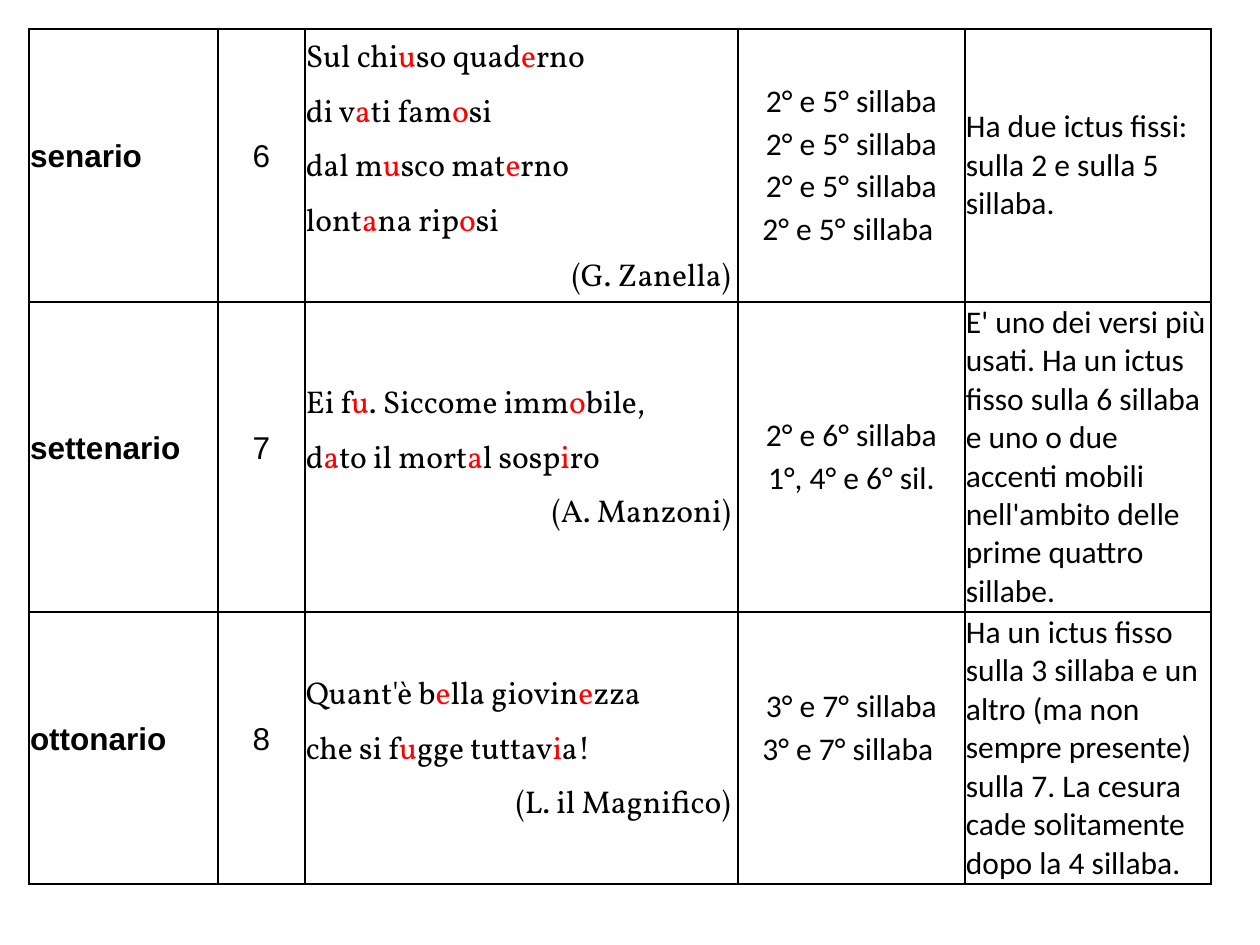
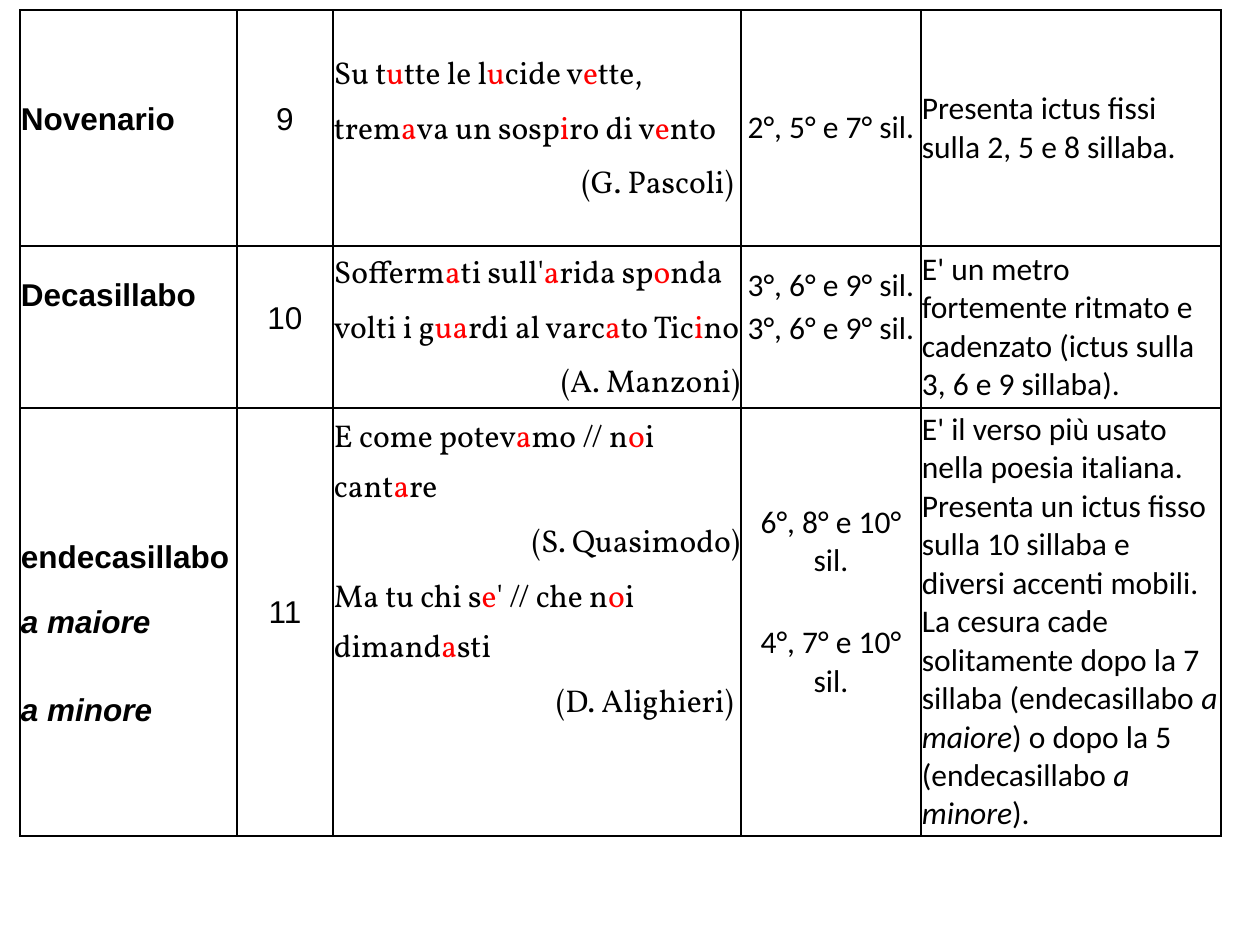
from collections import namedtuple

from lxml.etree import SubElement
from pptx import Presentation
from pptx.dml.color import RGBColor
from pptx.enum.text import MSO_ANCHOR as Anchor, PP_ALIGN as Align
from pptx.oxml.ns import qn
from pptx.util import Emu, Pt

PX = 914400 / 126
COLORS = {"ink": "000000", "accent": "FF0000"}
MARK = "|"  # encloses the stressed vowels of a verse, or italic words
TIE = "~"  # stands for a no-break space

ColumnStyle = namedtuple("ColumnStyle", "font bold align spacing accented")
COLUMN_STYLES = [
    ColumnStyle("Arial", True, Align.LEFT, Pt(10), False),
    ColumnStyle("Arial", False, Align.CENTER, Pt(10), False),
    ColumnStyle("Vollkorn", False, Align.LEFT, 1.15, True),
    ColumnStyle("Calibri", False, Align.CENTER, 1.0, False),
    ColumnStyle("Calibri", False, Align.LEFT, 1.0, False),
]

# Lines of a cell; gaps are extra px before each line, top and bottom extra margins
Content = namedtuple("Content", "lines gaps top bottom", defaults=((), 0, 0))

SHORT_VERSES = [
    [
        Content(["senario"]),
        Content(["6"]),
        Content([
            "Sul chi|u|so quad|e|rno",
            "di v|a|ti fam|o|si",
            "dal m|u|sco mat|e|rno",
            "lont|a|na rip|o|si",
            "(G. Zanella)~",
        ]),
        Content(["2° e 5° sillaba"] * 3 + ["2° e 5° sillaba~"]),
        Content(["Ha due ictus fissi: sulla 2 e sulla 5 sillaba."]),
    ],
    [
        Content(["settenario"]),
        Content(["7"]),
        Content([
            "Ei f|u|. Siccome imm|o|bile,",
            "d|a|to il mort|a|l sosp|i|ro",
            "(A. Manzoni)~",
        ]),
        Content(["2° e 6° sillaba", "1°, 4° e 6° sil."]),
        Content(["E' uno dei versi più usati. Ha un ictus fisso sulla 6 sillaba e uno o due "
                 "accenti mobili nell'ambito delle prime quattro sillabe."]),
    ],
    [
        Content(["ottonario"]),
        Content(["8"]),
        Content([
            "Quant'è b|e|lla giovin|e|zza",
            "che si f|u|gge tuttav|i|a!",
            "(L. il Magnifico)~",
        ]),
        Content(["3° e 7° sillaba", "3° e 7° sillaba~"], bottom=40),
        Content(["Ha un ictus fisso sulla 3 sillaba e un altro (ma non sempre presente) "
                 "sulla 7. La cesura cade solitamente dopo la 4 sillaba."]),
    ],
]

LONG_VERSES = [
    [
        Content(["Novenario"]),
        Content(["9"]),
        Content([
            "Su t|u|tte le l|u|cide v|e|tte,",
            "trem|a|va un sosp|i|ro di v|e|nto",
            "(G. Pascoli)~",
        ]),
        Content(["2°, 5° e 7° sil."]),
        Content(["Presenta ictus fissi sulla 2, 5 e 8 sillaba."]),
    ],
    [
        Content(["Decasillabo"], bottom=46),
        Content(["10"]),
        Content([
            "Sofferm|a|ti sull'|a|rida sp|o|nda",
            "volti i g|ua|rdi al varc|a|to Tic|i|no",
            "(A. Manzoni)",
        ]),
        Content(["3°, 6° e 9° sil."] * 2, bottom=40),
        Content(["E' un metro fortemente ritmato e cadenzato (ictus sulla 3, 6 e 9 sillaba)."]),
    ],
    [
        Content(["endecasillabo", "|a maiore|", "|a minore|"], gaps=(0, 44, 66), top=42),
        Content(["11"]),
        Content([
            "E come potev|a|mo // n|o|i cant|a|re",
            "(S. Quasimodo)",
            "Ma tu chi s|e|' // che n|o|i dimand|a|sti",
            "(D. Alighieri)~",
        ], bottom=107),
        Content(["6°, 8° e 10° sil.", "4°, 7° e 10° sil."], gaps=(0, 39), bottom=40),
        Content(["E' il verso più usato nella poesia italiana. Presenta un ictus fisso sulla 10 "
                 "sillaba e diversi accenti mobili. La cesura cade solitamente dopo la 7 sillaba "
                 "(endecasillabo~|a maiore|) o dopo la 5 (endecasillabo~|a minore|)."]),
    ],
]


def px(length):
    return Emu(round(length * PX))


def color(name):
    return RGBColor.from_string(COLORS[name])


class VerseDeck:
    def __init__(self):
        self.deck = Presentation()
        self.deck.slide_width, self.deck.slide_height = px(1260), px(945)
        self.page = None

    def add_page(self):
        self.page = self.deck.slides.add_slide(self.deck.slide_layouts[6])

    def add_table(self, left, top, widths, heights, rows):
        frame = self.page.shapes.add_table(
            len(heights), len(widths), px(left), px(top), px(sum(widths)), px(sum(heights)))
        table = frame.table
        table.first_row = table.horz_banding = False
        for column, width in zip(table.columns, widths):
            column.width = px(width)
        for row, height, contents in zip(table.rows, heights, rows):
            row.height = px(height)
            for cell, content, style in zip(row.cells, contents, COLUMN_STYLES):
                self.fill_cell(cell, content, style)

    def fill_cell(self, cell, content, style):
        self.add_borders(cell)
        cell.fill.background()
        cell.vertical_anchor = Anchor.MIDDLE
        cell.margin_left = cell.margin_right = px(1)
        cell.margin_top, cell.margin_bottom = px(1 + content.top), px(1 + content.bottom)
        gaps = content.gaps or [0] * len(content.lines)
        for index, (line, gap) in enumerate(zip(content.lines, gaps)):
            frame = cell.text_frame
            para = frame.add_paragraph() if index else frame.paragraphs[0]
            self.write_line(para, line, gap, style)

    def write_line(self, para, line, gap, style):
        is_author = style.accented and line.startswith("(")
        para.alignment = Align.RIGHT if is_author else style.align
        para.line_spacing = style.spacing
        para.space_before = Pt(1.2) + px(gap)
        para.space_after = Pt(1.2)
        para.font.name, para.font.size, para.font.bold = style.font, Pt(18), style.bold
        para.font.color.rgb = color("ink")
        for index, text in enumerate(line.replace(TIE, chr(160)).split(MARK)):
            if not text:
                continue
            span = para.add_run()
            span.text = text
            if index % 2 and style.accented:
                span.font.color.rgb = color("accent")
            elif index % 2:
                span.font.italic = True

    def add_borders(self, cell):
        properties = cell._tc.get_or_add_tcPr()
        for side in "LRTB":
            border = SubElement(properties, qn(f"a:ln{side}"), w=str(Pt(1)))
            fill = SubElement(border, qn("a:solidFill"))
            SubElement(fill, qn("a:srgbClr"), val=COLORS["ink"])


def main():
    verses = VerseDeck()
    verses.add_page()
    verses.add_table(29, 29, [189, 87, 433, 227, 246], [273, 310, 272], SHORT_VERSES)
    verses.add_page()
    verses.add_table(20, 10, [217, 96, 408, 180, 300], [236, 162, 428], LONG_VERSES)
    verses.deck.save("out.pptx")


if __name__ == "__main__":
    main()
